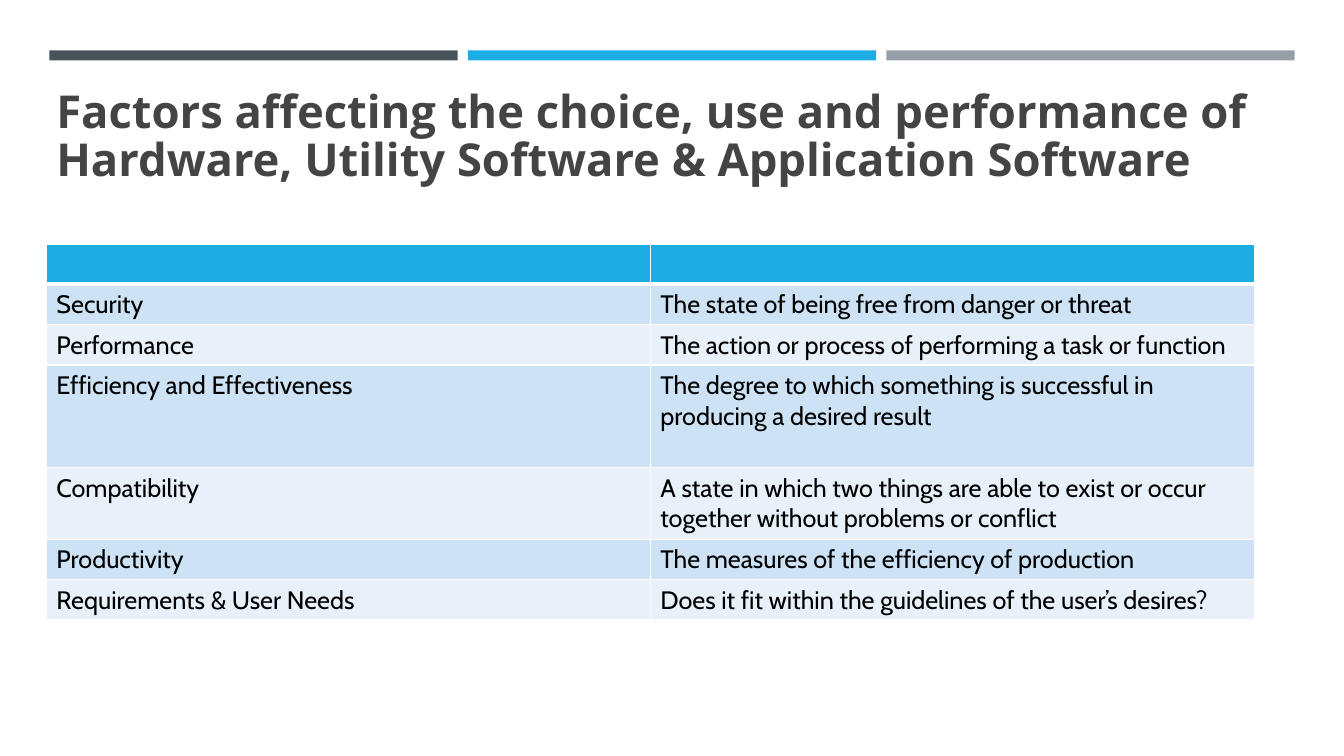
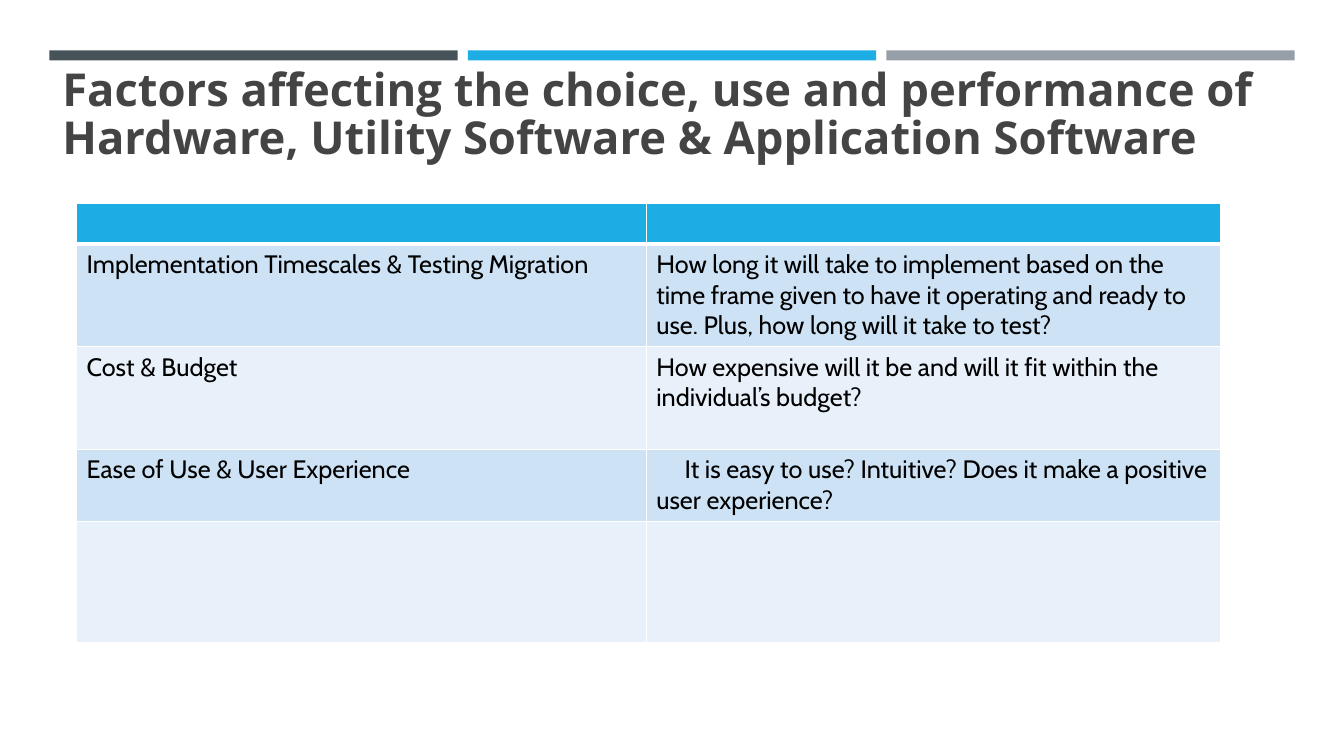
from lxml import etree
from pptx import Presentation
from pptx.dml.color import RGBColor
from pptx.enum import shapes, text
from pptx.oxml import ns
from pptx.util import Inches, Pt

COLORS = {
    "slate": "465359", "blue": "1CADE4", "gray": "969FA7", "title": "444444",
    "body": "000000", "odd": "CDE3F5", "even": "E8F1FA", "white": "FFFFFF",
}
TITLE = ("Factors affecting the choice, use and performance of "
         "Hardware, Utility Software & Application Software")
LINE, TWO_LINES, THREE_LINES, SPACER = 0.4, 0.71, 1.02, 1.21

SLIDES = [
    {
        "title_box": (0.46, 0.85, 12.15, 1.18),
        "table_at": (0.46, 2.42),
        "columns": (5.99, 5.99),
        "factors": [
            ("Security", "The state of being free from danger or threat", LINE),
            ("Performance", "The action or process of performing a task or function", LINE),
            ("Efficiency and Effectiveness",
             "The degree to which something is successful in producing a desired result",
             THREE_LINES),
            ("Compatibility",
             "A state in which two things are able to exist or occur together "
             "without problems or conflict", TWO_LINES),
            ("Productivity", "The measures of the efficiency of production", LINE),
            ("Requirements & User Needs",
             "Does it fit within the guidelines of the user’s desires?", LINE),
        ],
    },
    {
        "title_box": (0.52, 0.63, 12.6, 1.18),
        "table_at": (0.76, 2.02),
        "columns": (5.65, 5.7),
        "factors": [
            ("Implementation Timescales & Testing Migration",
             "How long it will take to implement based on the time frame given to have it "
             "operating and ready to use. Plus, how long will it take to test?", THREE_LINES),
            ("Cost & Budget",
             "How expensive will it be and will it fit within the individual’s budget?",
             THREE_LINES),
            ("Ease of Use & User Experience",
             "It is easy to use? Intuitive? Does it make a positive user experience?",
             TWO_LINES),
            ("", "", SPACER),
        ],
        "indents": {(3, 1): 0.28},
    },
]


def rgb(name):
    """Return the named colour."""
    return RGBColor.from_string(COLORS[name])


def write(frame, content, *, size, font, color, bold=False, spacing=1.0, indent=0):
    """Write one formatted paragraph into a text frame."""
    paragraph = frame.paragraphs[0]
    paragraph.line_spacing = spacing
    if indent:
        paragraph._p.get_or_add_pPr().set("indent", str(Inches(indent)))
    run = paragraph.add_run()
    run.text = content
    run.font.size = Pt(size)
    run.font.name = font
    run.font.bold = bold
    run.font.color.rgb = rgb(color)


def add_bands(slide, left=0.49, top=0.5, width=4.05, height=0.1, gap=0.1):
    """Draw the three coloured bands across the top."""
    for index, color in enumerate(("slate", "blue", "gray")):
        band = slide.shapes.add_shape(
            shapes.MSO_SHAPE.RECTANGLE, Inches(left + index * (width + gap)),
            Inches(top), Inches(width), Inches(height))
        band.shadow.inherit = False
        band.fill.solid()
        band.fill.fore_color.rgb = rgb(color)
        band.line.fill.background()


def add_title(slide, box):
    """Place the shared title in the given box."""
    frame = slide.shapes.add_textbox(*map(Inches, box)).text_frame
    frame.word_wrap = True
    frame.vertical_anchor = text.MSO_ANCHOR.TOP
    write(frame, TITLE, size=32.4, font="Open Sans", color="title", bold=True, spacing=0.88)


def set_borders(cell, **widths):
    """Give a cell white borders with the given widths in points."""
    properties = cell._tc.get_or_add_tcPr()
    for index, (side, width) in enumerate(widths.items()):
        border = etree.Element(ns.qn(f"a:ln{side}"), w=str(Pt(width)))
        fill = etree.SubElement(border, ns.qn("a:solidFill"))
        etree.SubElement(fill, ns.qn("a:srgbClr"), val=COLORS["white"])
        properties.insert(index, border)


def add_factors(slide, at, columns, factors, indents):
    """Build the table of factors below an empty header row."""
    rows = [("", "", LINE), *factors]
    heights = [row[-1] for row in rows]
    table = slide.shapes.add_table(
        len(rows), len(columns), *map(Inches, (*at, sum(columns), sum(heights)))).table
    table.horz_banding = False
    for column, width in zip(table.columns, columns):
        column.width = Inches(width)
    for r, (*entries, height) in enumerate(rows):
        table.rows[r].height = Inches(height)
        shade = "blue" if r == 0 else "odd" if r % 2 else "even"
        for c, entry in enumerate(entries):
            cell = table.cell(r, c)
            cell.fill.solid()
            cell.fill.fore_color.rgb = rgb(shade)
            set_borders(cell, L=1, R=1, T=3 if r == 1 else 1, B=3 if r == 0 else 1)
            if entry:
                write(cell.text_frame, entry, size=18, font="Cabin", color="body",
                      indent=indents.get((r, c), 0))


def add_factor_slide(deck, content):
    """Add one slide with bands, title and table."""
    slide = deck.slides.add_slide(deck.slide_layouts[6])
    add_bands(slide)
    add_title(slide, content["title_box"])
    add_factors(slide, content["table_at"], content["columns"], content["factors"],
                content.get("indents", {}))


def main():
    """Build and save the presentation."""
    deck = Presentation()
    deck.slide_width, deck.slide_height = Inches(13.33), Inches(7.5)
    for content in SLIDES:
        add_factor_slide(deck, content)
    deck.save("out.pptx")


if __name__ == "__main__":
    main()
